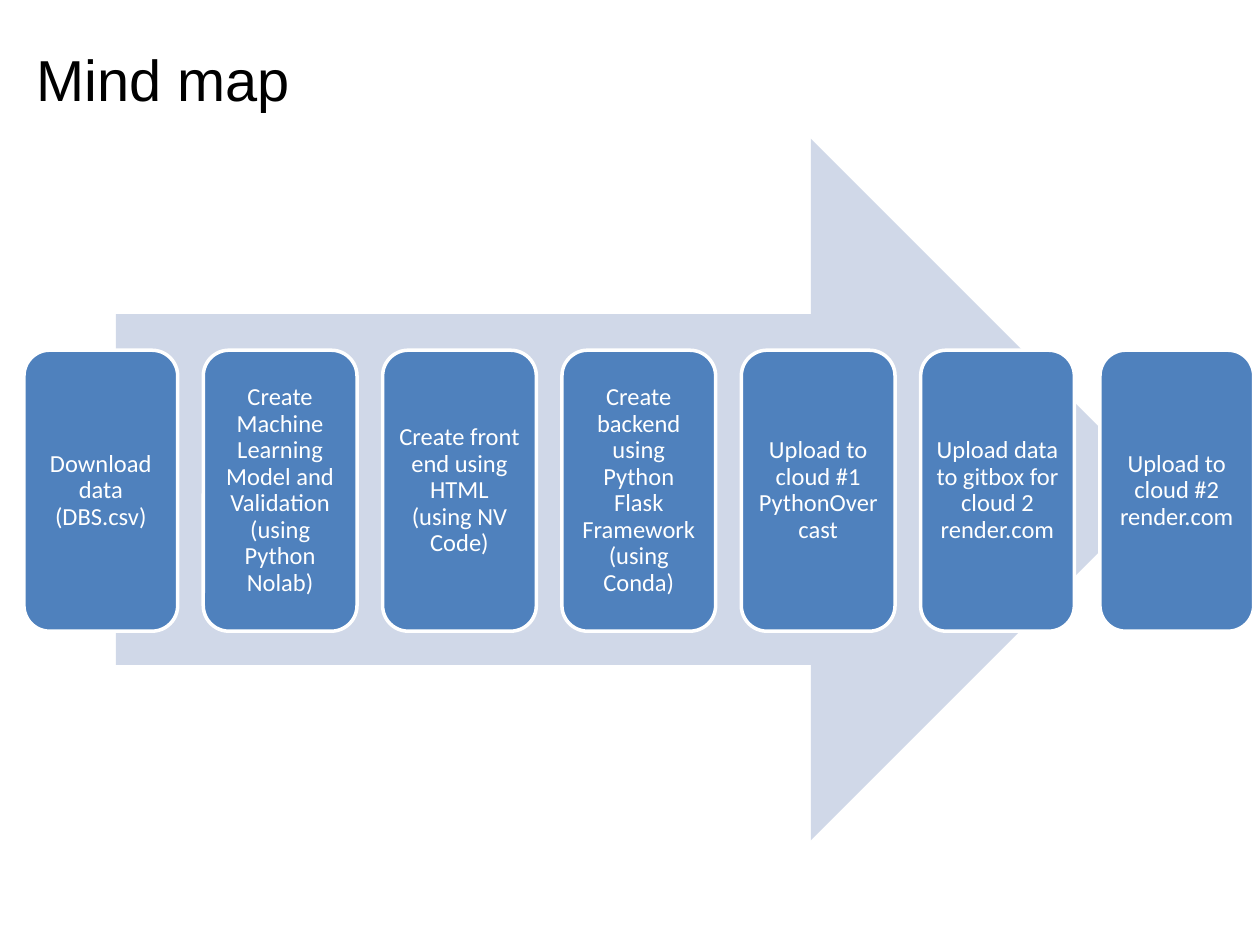
from dataclasses import dataclass

from pptx import Presentation
from pptx.dml.color import RGBColor
from pptx.enum.shapes import MSO_SHAPE
from pptx.enum.text import MSO_ANCHOR, PP_ALIGN
from pptx.util import Inches, Pt

ARROW, ROUNDED = MSO_SHAPE.RIGHT_ARROW, MSO_SHAPE.ROUNDED_RECTANGLE
MIDDLE = MSO_ANCHOR.MIDDLE
LEFT, CENTER = PP_ALIGN.LEFT, PP_ALIGN.CENTER

FIRST_LEFT, LAST_LEFT = 0.19, 8.73
STEP_TOP, STEP_W, STEP_H = 2.78, 1.22, 2.23
INSET = 0.06


@dataclass
class Step:
    text: str
    left: float


def rgb(value: str) -> RGBColor:
    return RGBColor.from_string(value)


def set_font(p, name: str, size: float, color: str) -> None:
    p.font.name = name
    p.font.size = Pt(size)
    p.font.color.rgb = rgb(color)


def add_filled(s, kind, left: float, top: float, width: float, height: float, fill: str):
    sp = s.shapes.add_shape(kind, Inches(left), Inches(top), Inches(width), Inches(height))
    sp.shadow.inherit = False
    sp.fill.solid()
    sp.fill.fore_color.rgb = rgb(fill)
    sp.line.fill.background()
    return sp


def add_step(s, step: Step) -> None:
    sp = add_filled(s, ROUNDED, step.left, STEP_TOP, STEP_W, STEP_H, "4F81BD")
    sp.line.color.rgb = rgb("FFFFFF")
    sp.line.width = Pt(2)
    tf = sp.text_frame
    tf.word_wrap = True
    tf.vertical_anchor = MIDDLE
    tf.margin_left = tf.margin_right = tf.margin_top = tf.margin_bottom = Inches(INSET)
    p = tf.paragraphs[0]
    p.text = step.text
    p.alignment = CENTER
    p.line_spacing = 0.9
    set_font(p, "Calibri", 14, "FFFFFF")


def main() -> None:
    prs = Presentation()
    prs.slide_width, prs.slide_height = Inches(10), Inches(7.5)
    s = prs.slides.add_slide(prs.slide_layouts[5])

    # Title
    title = s.shapes.title
    title.left, title.top = Inches(0.19), Inches(0)
    title.width, title.height = Inches(9), Inches(1.25)
    tf = title.text_frame
    tf.vertical_anchor = MIDDLE
    p = tf.paragraphs[0]
    p.text = "Mind map"
    p.alignment = LEFT
    set_font(p, "Arial", 33, "000000")

    # Background arrow
    add_filled(s, ARROW, 0.92, 1.1, 8.3, 5.57, "D0D8E8")

    # Process steps, evenly spaced
    texts = [
        "Download data (DBS.csv)",
        "Create Machine Learning Model and Validation (using Python Nolab)",
        "Create front end using HTML (using NV Code)",
        "Create backend using Python Flask Framework (using Conda)",
        "Upload to cloud #1 PythonOvercast",
        "Upload data to gitbox for cloud 2 render.com",
        "Upload to cloud #2 render.com",
    ]
    pitch = (LAST_LEFT - FIRST_LEFT) / (len(texts) - 1)
    for i, text in enumerate(texts):
        add_step(s, Step(text, FIRST_LEFT + i * pitch))

    prs.save("out.pptx")


if __name__ == "__main__":
    main()
